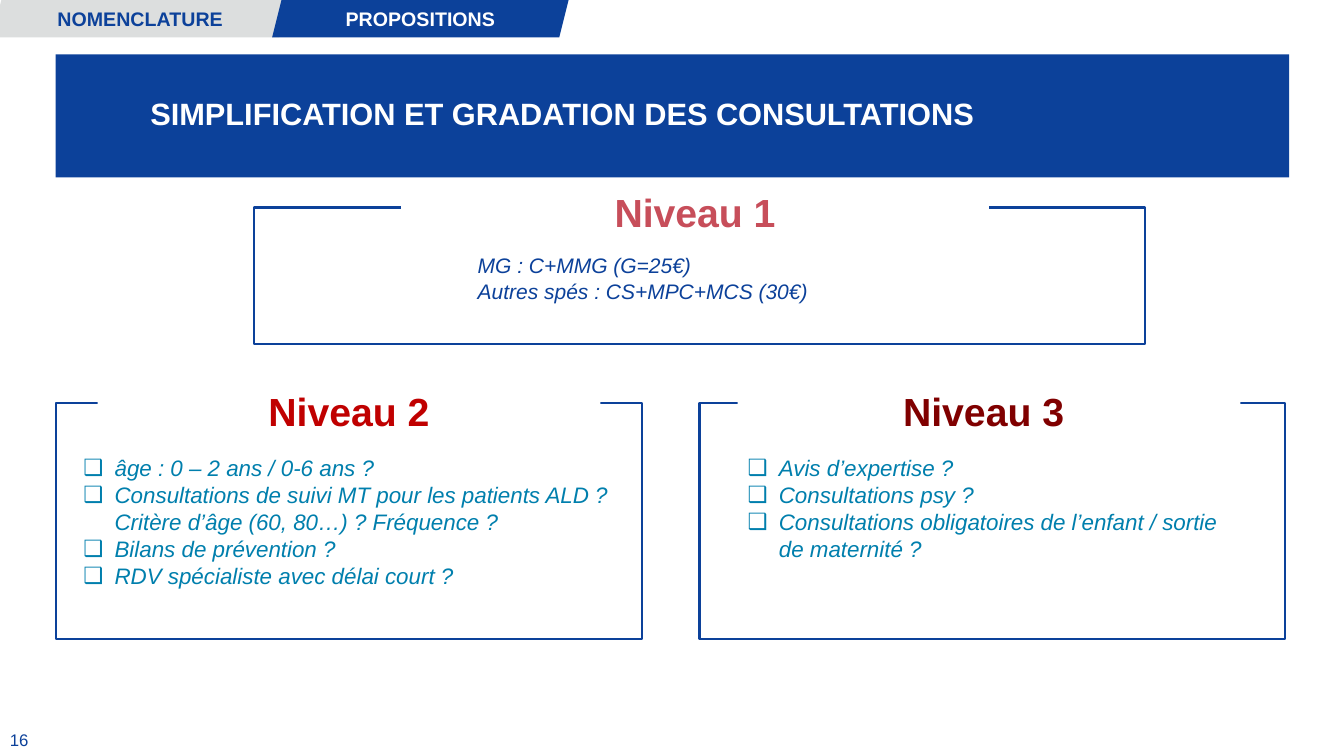
"""Builds the slide on simplified and graded consultation levels."""
from dataclasses import dataclass

from lxml.etree import SubElement
from pptx import Presentation
from pptx.dml.color import RGBColor
from pptx.enum.shapes import MSO_SHAPE
from pptx.enum.text import MSO_ANCHOR, PP_ALIGN
from pptx.oxml.ns import qn
from pptx.util import Cm, Pt

TITLE = "SIMPLIFICATION ET GRADATION DES CONSULTATIONS"
PAGE_NUMBER = "16"
TABS = [("NOMENCLATURE", "DCDEDE", "0C419A"), ("PROPOSITIONS", "0C419A", "FFFFFF")]
LEVELS = [
    {
        "heading": "Niveau 1", "color": "C74E5A", "bulleted": False,
        "items": ["MG : C+MMG (G=25€)\vAutres spés : CS+MPC+MCS (30€)"],
        "frame": (6.4, 5.23, 22.45, 3.43),
        "heading_box": (10.11, 4.62, 14.81, 1.45),
        "items_box": (10.52, 6.25, 13.06, 1.55),
    },
    {
        "heading": "Niveau 2", "color": "C00000", "bulleted": True,
        "items": [
            "âge : 0 – 2 ans / 0-6 ans ?",
            "Consultations de suivi MT pour les patients ALD ? Critère d’âge (60, 80…) ? Fréquence ?",
            "Bilans de prévention ?",
            "RDV spécialiste avec délai court ?",
        ],
        "frame": (1.42, 10.16, 14.76, 5.94),
        "heading_box": (2.46, 9.63, 12.67, 1.45),
        "items_box": (1.85, 11.33, 14.1, 3.68),
    },
    {
        "heading": "Niveau 3 ", "color": "800000", "bulleted": True,
        "items": [
            "Avis d’expertise ?",
            "Consultations psy ?",
            "Consultations obligatoires de l’enfant / sortie de maternité ?",
        ],
        "frame": (17.63, 10.16, 14.76, 5.94),
        "heading_box": (18.59, 9.63, 12.67, 1.45),
        "items_box": (18.59, 11.33, 13.06, 3),
    },
]
TITLE_BOX = (1.4, 1.37, 31.09, 3.1)
NUMBER_BOX = (0, 18.26, 2.01, 0.79)
TAB_LEFT, TAB_STEP, TAB_WIDTH, TAB_HEIGHT = -0.2, 7.06, 7.47, 0.94
BULLET_INDENT, PLAIN_INDENT = 0.79, 1.27


@dataclass(frozen=True)
class Theme:
    """Colours, font and type sizes of the slide."""
    font: str = "Arial"
    blue: str = "0C419A"
    teal: str = "007FAD"
    white: str = "FFFFFF"
    title: int = 22
    tab: int = 14
    number: int = 12
    heading: int = 28
    bulleted: int = 16
    plain: int = 15
    outline: float = 1.5


THEME = Theme()


def add_panel(slide, box, fill=None, line=None, preset=MSO_SHAPE.RECTANGLE):
    """Add a flat preset shape with an optional fill and outline."""
    panel = slide.shapes.add_shape(preset, *map(Cm, box))
    panel.shadow.inherit = False
    if fill:
        panel.fill.solid()
        panel.fill.fore_color.rgb = RGBColor.from_string(fill)
    else:
        panel.fill.background()
    if line:
        panel.line.color.rgb = RGBColor.from_string(line)
        panel.line.width = Pt(THEME.outline)
    else:
        panel.line.fill.background()
    return panel


def write(shape, lines, size, color, align=PP_ALIGN.LEFT, anchor=MSO_ANCHOR.MIDDLE,
          bold=False, italic=False):
    """Fill a shape with formatted paragraphs and return them."""
    frame = shape.text_frame
    frame.word_wrap = True
    frame.vertical_anchor = anchor
    for index, line in enumerate(lines):
        paragraph = frame.add_paragraph() if index else frame.paragraphs[0]
        paragraph.text = line
        paragraph.alignment = align
        for run in paragraph.runs:
            run.font.name = THEME.font
            run.font.size = Pt(size)
            run.font.bold = bold
            run.font.italic = italic
            run.font.color.rgb = RGBColor.from_string(color)
    return frame.paragraphs


def indent(paragraph, left, bullet=None):
    """Indent a paragraph, hanging it on a bullet when one is given."""
    properties = paragraph._p.get_or_add_pPr()
    properties.set("marL", str(Cm(left)))
    properties.set("indent", str(-Cm(left) if bullet else 0))
    if bullet:
        SubElement(properties, qn("a:buFont")).set("typeface", THEME.font)
        SubElement(properties, qn("a:buChar")).set("char", bullet)


def add_level(slide, level):
    """Add one level: outlined frame, heading over its top edge, and items."""
    add_panel(slide, level["frame"], line=THEME.blue)
    heading = add_panel(slide, level["heading_box"], THEME.white)
    write(heading, [level["heading"]], THEME.heading, level["color"],
          PP_ALIGN.CENTER, MSO_ANCHOR.TOP, bold=True)
    bulleted = level["bulleted"]
    size, color = (THEME.bulleted, THEME.teal) if bulleted else (THEME.plain, THEME.blue)
    items = add_panel(slide, level["items_box"], THEME.white)
    for paragraph in write(items, level["items"], size, color,
                           anchor=MSO_ANCHOR.TOP, italic=True):
        if bulleted:
            indent(paragraph, BULLET_INDENT, "❑")
        else:
            indent(paragraph, PLAIN_INDENT)


def main():
    """Build and save the slide."""
    deck = Presentation()
    deck.slide_width, deck.slide_height = Cm(33.87), Cm(19.05)
    slide = deck.slides.add_slide(deck.slide_layouts[6])

    banner = add_panel(slide, TITLE_BOX, THEME.blue)
    banner.text_frame.margin_left = Cm(2.39)
    write(banner, [TITLE], THEME.title, THEME.white, bold=True)[0].line_spacing = 0.9

    for index, (label, fill, color) in enumerate(TABS):
        box = (TAB_LEFT + index * TAB_STEP, 0, TAB_WIDTH, TAB_HEIGHT)
        tab = add_panel(slide, box, fill, preset=MSO_SHAPE.PARALLELOGRAM)
        write(tab, [label], THEME.tab, color, PP_ALIGN.CENTER, bold=True)

    number = slide.shapes.add_textbox(*map(Cm, NUMBER_BOX))
    write(number, [PAGE_NUMBER], THEME.number, THEME.blue)

    for level in LEVELS:
        add_level(slide, level)
    deck.save("out.pptx")


if __name__ == "__main__":
    main()
